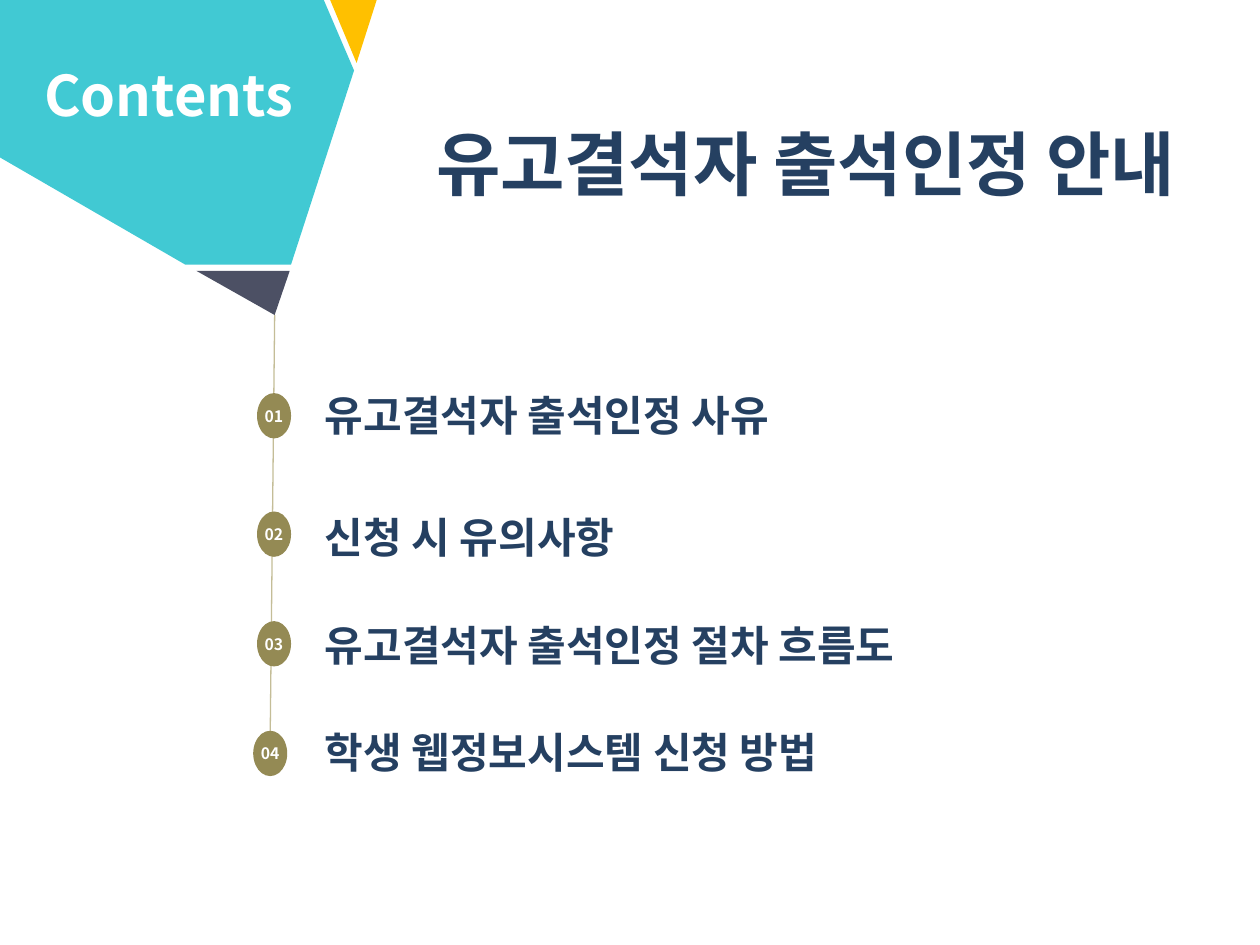
from pptx import Presentation
from pptx.dml.color import RGBColor
from pptx.enum.shapes import MSO_CONNECTOR, MSO_SHAPE
from pptx.enum.text import MSO_ANCHOR, MSO_AUTO_SIZE, PP_ALIGN
from pptx.oxml.ns import qn
from pptx.util import Inches, Pt

COLORS = {"navy": "254061", "white": "FFFFFF", "olive": "948A54", "line": "C4BD97",
          "amber": "FFC000", "teal": "41C9D3", "slate": "4C5064"}
KOREAN = "Noto Sans CJK KR"

TITLE = "유고결석자 출석인정 안내"
# text, text top, badge left, badge top
ITEMS = [
    ("유고결석자 출석인정 사유", 3.04, 2.04, 3.12),
    ("신청 시 유의사항", 4.01, 2.04, 4.06),
    ("유고결석자 출석인정 절차 흐름도", 4.87, 2.04, 4.93),
    ("학생 웹정보시스템 신청 방법", 5.72, 2.01, 5.8),
]
CORNER = [
    ("amber", [(2.62, 0), (3, 0), (2.99, 0), (2.83, 0.5)]),
    ("teal", [(0, 0), (2.57, 0), (2.81, 0.56), (2.31, 2.1), (1.47, 2.1), (0, 1.25)]),
    ("slate", [(1.56, 2.15), (2.3, 2.15), (2.18, 2.5)]),
]
LINE_START, LINE_END = (2.18, 2.5), (2.14, 5.8)
BADGE_W, BADGE_H = 0.27, 0.36


def rgb(name):
    return RGBColor.from_string(COLORS[name])


def paint(sp, color):
    sp.shadow.inherit = False
    sp.fill.solid()
    sp.fill.fore_color.rgb = rgb(color)
    sp.line.fill.background()


def write(sp, text, size, color, align=None, font=KOREAN, spacing=None, **frame):
    """Fill a shape with one bold line; frame holds text frame attributes."""
    tf = sp.text_frame
    for name, value in {"word_wrap": True, **frame}.items():
        setattr(tf, name, value)
    p = tf.paragraphs[0]
    p.alignment, p.line_spacing = align, spacing
    r = p.add_run()
    r.text = text
    for name, value in {"size": Pt(size), "bold": True, "name": font}.items():
        setattr(r.font, name, value)
    r.font.color.rgb = rgb(color)
    ea = r.font._element.makeelement(qn("a:ea"), {"typeface": KOREAN})
    r.font._element.find(qn("a:latin")).addnext(ea)


def add_text(slide, box, *args, **kwargs):
    sp = slide.shapes.add_textbox(*map(Inches, box))
    write(sp, *args, auto_size=MSO_AUTO_SIZE.SHAPE_TO_FIT_TEXT, **kwargs)


def add_badge(slide, number, left, top):
    sp = slide.shapes.add_shape(MSO_SHAPE.OVAL, *map(Inches, (left, top, BADGE_W, BADGE_H)))
    paint(sp, "olive")
    insets = dict.fromkeys(("margin_left", "margin_top", "margin_right", "margin_bottom"), 0)
    write(sp, f"{number:02d}", 9, "white", PP_ALIGN.CENTER,
          vertical_anchor=MSO_ANCHOR.MIDDLE, **insets)
    return sp


def add_timeline(slide):
    cx = slide.shapes.add_connector(MSO_CONNECTOR.STRAIGHT,
                                    *map(Inches, LINE_START + LINE_END))
    cx.line.color.rgb = rgb("line")
    cx.line.width = Pt(0.75)
    props = cx._element.spPr
    props.append(props.makeelement(qn("a:effectLst"), {}))
    return cx


def add_polygon(slide, color, points):
    start, *rest = [(Inches(x), Inches(y)) for x, y in points]
    builder = slide.shapes.build_freeform(*start)
    builder.add_line_segments(rest, close=True)
    paint(builder.convert_to_shape(), color)


def main():
    prs = Presentation()
    prs.slide_width, prs.slide_height = Inches(10), Inches(7.5)
    slide = prs.slides.add_slide(prs.slide_layouts[5])

    title = slide.shapes.title
    title.left, title.top, title.width, title.height = map(Inches, (3.03, 0.57, 6.73, 1.21))
    write(title, TITLE, 40, "navy", PP_ALIGN.CENTER, spacing=1.5,
          vertical_anchor=MSO_ANCHOR.TOP, auto_size=MSO_AUTO_SIZE.NONE)

    timeline = add_timeline(slide)
    for color, points in CORNER:
        add_polygon(slide, color, points)
    add_text(slide, (0.04, 0.43, 2.6, 0.64), "Contents", 32, "white", PP_ALIGN.CENTER)

    for number, (text, top, badge_left, badge_top) in enumerate(ITEMS, 1):
        badge = add_badge(slide, number, badge_left, badge_top)
        add_text(slide, (2.48, top, 7.17, 0.5), text, 24, "navy", font="Arial")
    timeline.end_connect(badge, 0)

    prs.save("out.pptx")


if __name__ == "__main__":
    main()
